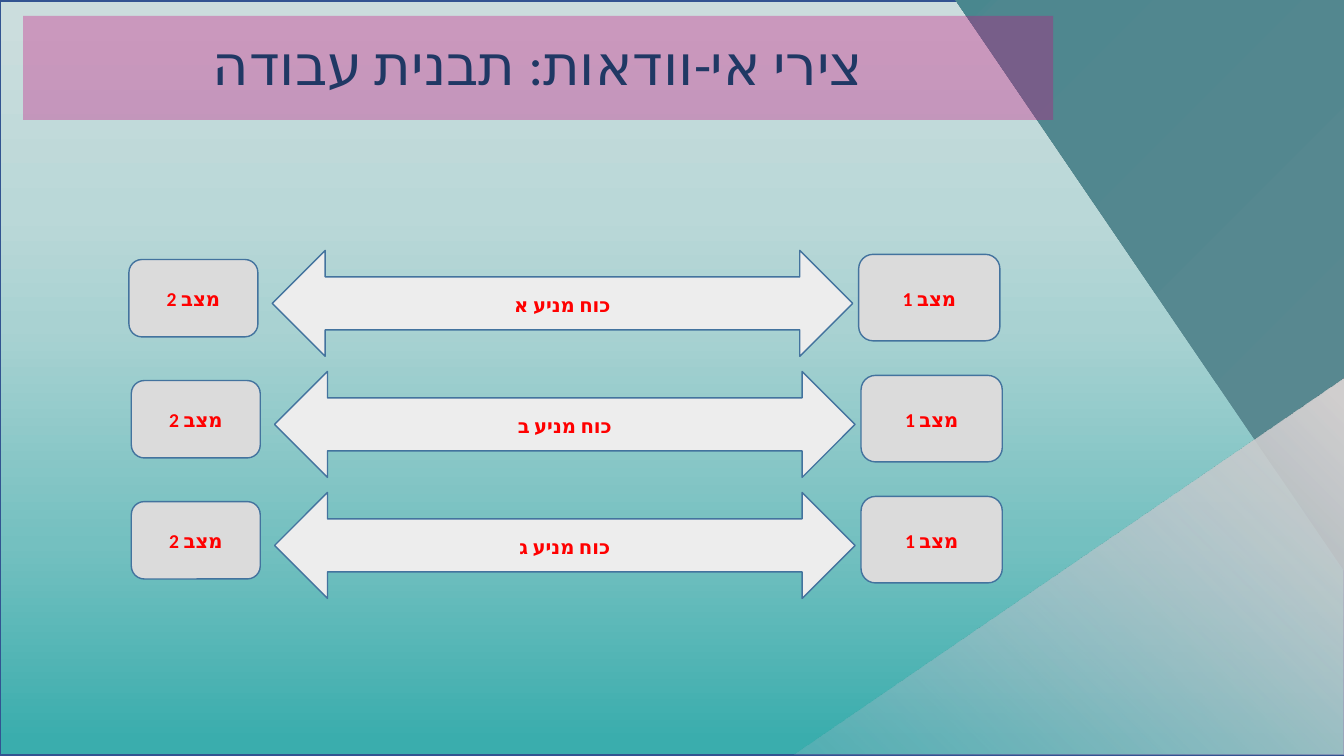
from dataclasses import dataclass

from lxml import etree
from pptx import Presentation
from pptx.dml.color import RGBColor
from pptx.enum.shapes import MSO_SHAPE
from pptx.enum.text import MSO_ANCHOR, MSO_AUTO_SIZE, PP_ALIGN
from pptx.oxml.ns import qn
from pptx.util import Cm, Pt

RECTANGLE = MSO_SHAPE.RECTANGLE
TRIANGLE = MSO_SHAPE.ISOSCELES_TRIANGLE
ROUNDED = MSO_SHAPE.ROUNDED_RECTANGLE
DOUBLE_ARROW = MSO_SHAPE.LEFT_RIGHT_ARROW
MIDDLE = MSO_ANCHOR.MIDDLE
CENTER = PP_ALIGN.CENTER
NO_AUTOFIT = MSO_AUTO_SIZE.NONE


@dataclass(frozen=True)
class Theme:
    font: str = "Calibri"
    title_size: int = 40
    label_size: int = 14
    title_text: str = "203864"
    title_band: str = "CA0C7D"
    label_text: str = "FF0000"
    arrow: str = "EDEDED"
    state: str = "DBDBDB"
    outline: str = "43739E"
    frame: str = "325491"
    # Gradient stops: position %, colour, opacity %
    backdrop: tuple = ((2, "3AADAD", 100), (28, "74C0C0", 100), (57, "A9D2D2", 100),
                       (72, "BAD8D8", 100), (98, "CBDDDD", 100))
    upper_corner: tuple = ((2, "5A8890", 100), (95, "4F878F", 100), (97, "49878E", 100))
    lower_corner: tuple = ((1, "ADB9CA", 22), (97, "D0CECE", 100))


THEME = Theme()


def write(shape, text, *, size, color, bold=False, spacing=1.07):
    """Put centred right-to-left text in the shape."""
    frame = shape.text_frame
    frame.word_wrap = True
    frame.auto_size = NO_AUTOFIT
    frame.vertical_anchor = MIDDLE
    paragraph = frame.paragraphs[0]
    paragraph.alignment = CENTER
    paragraph.line_spacing = spacing
    paragraph._p.get_or_add_pPr().set("rtl", "1")
    run = paragraph.add_run()
    run.text = text
    run.font.name = THEME.font
    run.font.size = Pt(size)
    run.font.bold = bold
    run.font.color.rgb = RGBColor.from_string(color)
    properties = run._r.get_or_add_rPr()
    properties.set("lang", "he-IL")
    etree.SubElement(properties, qn("a:cs"), typeface=THEME.font)


def fill_gradient(shape, stops, angle):
    """Fill with any number of stops, each with its own opacity."""
    shape.fill.gradient()
    gradient = shape._element.spPr.find(qn("a:gradFill"))
    for child in list(gradient):
        gradient.remove(child)
    stop_list = etree.SubElement(gradient, qn("a:gsLst"))
    for position, color, opacity in stops:
        stop = etree.SubElement(stop_list, qn("a:gs"), pos=str(position * 1000))
        rgb = etree.SubElement(stop, qn("a:srgbClr"), val=color)
        if opacity < 100:
            etree.SubElement(rgb, qn("a:alpha"), val=str(opacity * 1000))
    etree.SubElement(gradient, qn("a:lin"), ang=str(angle * 60000), scaled="0")


presentation = Presentation()
presentation.slide_width = Cm(33.87)
presentation.slide_height = Cm(19.05)
slide = presentation.slides.add_slide(presentation.slide_layouts[5])

# Backdrop and corner triangles
for kind, left, top, width, height, rotation, stops, angle in (
    (RECTANGLE, 0, 0.03, 33.87, 19, 0, THEME.backdrop, 270),
    (TRIANGLE, 24.08, 0, 9.8, 14.4, 180, THEME.upper_corner, 45),
    (TRIANGLE, 22.2, 7.32, 9.5, 13.89, 270, THEME.lower_corner, 45),
):
    shape = slide.shapes.add_shape(kind, Cm(left), Cm(top), Cm(width), Cm(height))
    shape.shadow.inherit = False
    shape.rotation = rotation
    fill_gradient(shape, stops, angle)
    if kind == TRIANGLE:
        shape.adjustments[0] = 0
        shape.line.fill.background()
    else:
        shape.line.color.rgb = RGBColor.from_string(THEME.frame)
        shape.line.width = Pt(1)

# Title, brought in front of the backdrop
title = slide.shapes.title
title.element.getparent().append(title.element)
title.left, title.top, title.width, title.height = Cm(0.58), Cm(0.4), Cm(25.96), Cm(2.62)
title.fill.solid()
title.fill.fore_color.rgb = RGBColor.from_string(THEME.title_band)
band_color = title._element.spPr.find(qn("a:solidFill"))[0]
etree.SubElement(band_color, qn("a:alpha"), val="33000")
write(title, "צירי אי-וודאות: תבנית עבודה", size=THEME.title_size,
      color=THEME.title_text, spacing=0.9)

# One axis per row: driving force between two states
FIRST_TOP, ROW_PITCH = 6.31, 3.05
for row, (force, shift) in enumerate((("כוח מניע א", 0), ("כוח מניע ב", 0.06), ("כוח מניע ג", 0.06))):
    axis = slide.shapes.add_group_shape()
    for kind, text, left, offset, width, height, color in (
        (DOUBLE_ARROW, force, 6.86, 0, 14.63, 2.67, THEME.arrow),
        (ROUNDED, "מצב 1", 21.64, 0.1, 3.56, 2.18, THEME.state),
        (ROUNDED, "מצב 2", 3.25, 0.23, 3.25, 1.95, THEME.state),
    ):
        top = FIRST_TOP + row * ROW_PITCH + offset
        shape = axis.shapes.add_shape(kind, Cm(left + shift), Cm(top), Cm(width), Cm(height))
        shape.shadow.inherit = False
        shape.fill.solid()
        shape.fill.fore_color.rgb = RGBColor.from_string(color)
        shape.line.color.rgb = RGBColor.from_string(THEME.outline)
        shape.line.width = Pt(1)
        write(shape, text, size=THEME.label_size, color=THEME.label_text, bold=True)

presentation.save("out.pptx")
